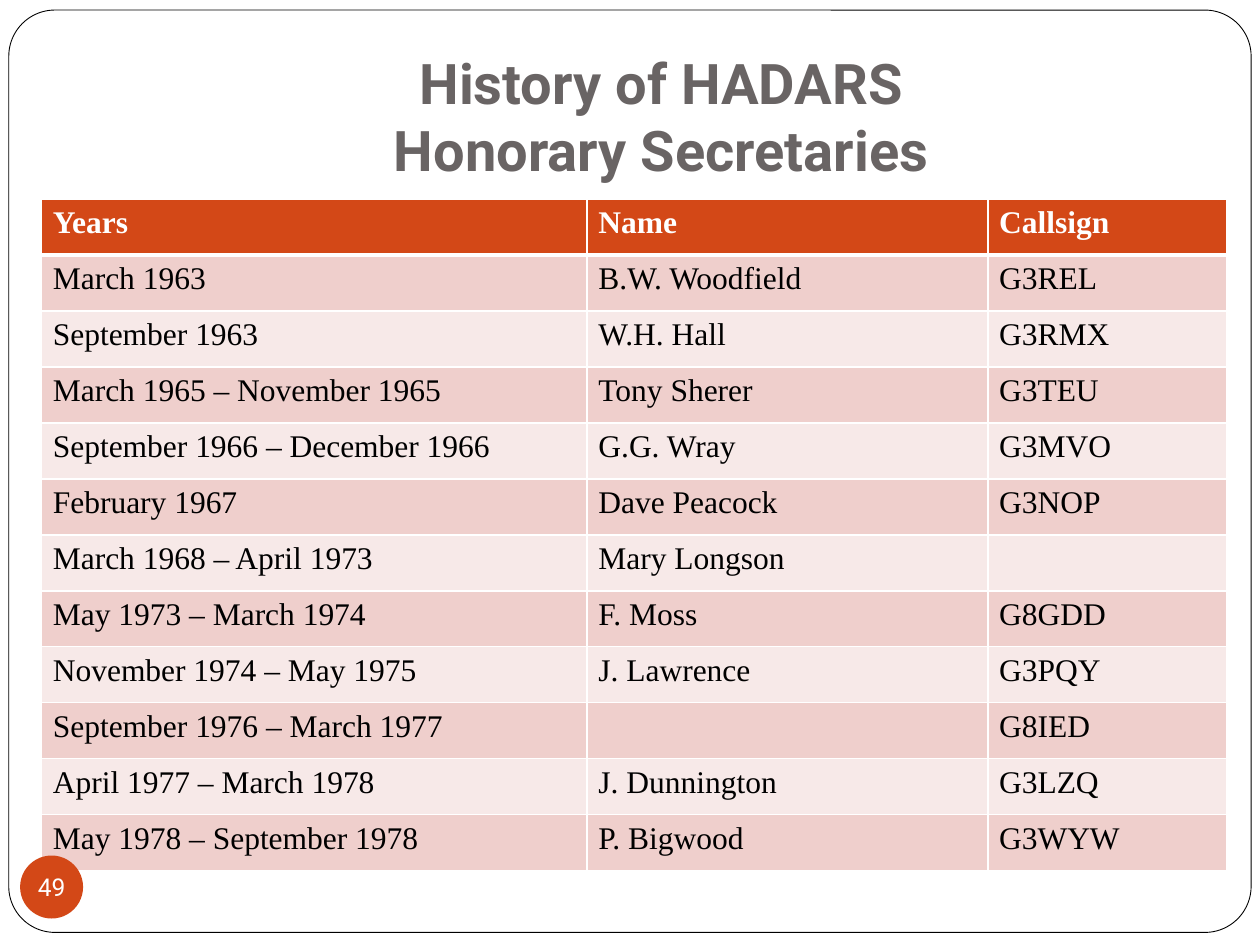
import pptx
import pptx.util
import pptx.dml.color
import pptx.enum.shapes
import pptx.enum.text
import pptx.oxml
import pptx.oxml.ns

Inches, Pt = pptx.util.Inches, pptx.util.Pt
Shape = pptx.enum.shapes.MSO_SHAPE
Align = pptx.enum.text.PP_ALIGN
Anchor = pptx.enum.text.MSO_ANCHOR
RUST, PINK, PALE = "D34817", "EFCFCC", "F7E9E8"
WHITE, BLACK, GRAY = "FFFFFF", "000000", "696464"


def color(code):
    return pptx.dml.color.RGBColor.from_string(code)


def write(frame, text, font="Times New Roman", size=18, ink=BLACK, bold=False,
          align=Align.LEFT, anchor=Anchor.TOP, wrap=True,
          pad=(0.1, 0.05, 0.1, 0.05)):
    frame.word_wrap = wrap
    frame.vertical_anchor = anchor
    frame.margin_left, frame.margin_top, frame.margin_right, frame.margin_bottom = map(Inches, pad)
    para = frame.paragraphs[0]
    para.alignment = align
    for i, line in enumerate(text.split("\n")):
        if i:
            para.add_line_break()
        run = para.add_run()
        run.text = line
        run.font.name = font
        run.font.size = Pt(size)
        run.font.bold = bold
        run.font.color.rgb = color(ink)


deck = pptx.Presentation()
deck.slide_width, deck.slide_height = Inches(10), Inches(7.5)
slide = deck.slides.add_slide(deck.slide_layouts[6])
shapes = slide.shapes

# Rounded frame
frame = shapes.add_shape(Shape.ROUNDED_RECTANGLE, Inches(0.07), Inches(0.08),
                         Inches(9.86), Inches(7.32))
frame.adjustments[0] = 0.05
frame.shadow.inherit = False
frame.fill.solid()
frame.fill.fore_color.rgb = color(WHITE)
frame.line.color.rgb = color(BLACK)
frame.line.width = Pt(0.5)

# Title
title = shapes.add_textbox(Inches(1), Inches(0.3), Inches(8.5), Inches(1.25))
write(title.text_frame, "History of HADARS\nHonorary Secretaries", font="Roboto",
      size=32, ink=GRAY, bold=True, align=Align.CENTER, anchor=Anchor.BOTTOM,
      pad=(0.1, 0.05, 0.1, 0.1))

# Table of secretaries
rows = [
    ("Years", "Name", "Callsign"),
    ("March 1963", "B.W. Woodfield", "G3REL"),
    ("September 1963", "W.H. Hall", "G3RMX"),
    ("March 1965 – November 1965", "Tony Sherer", "G3TEU"),
    ("September 1966 – December 1966", "G.G. Wray", "G3MVO"),
    ("February 1967", "Dave Peacock", "G3NOP"),
    ("March 1968 – April 1973", "Mary Longson", ""),
    ("May 1973 – March 1974", "F. Moss", "G8GDD"),
    ("November 1974 – May 1975", "J. Lawrence", "G3PQY"),
    ("September 1976 – March 1977", "", "G8IED"),
    ("April 1977 – March 1978", "J. Dunnington", "G3LZQ"),
    ("May 1978 – September 1978", "P. Bigwood", "G3WYW"),
]
table = shapes.add_table(len(rows), 3, Inches(0.33), Inches(1.58),
                         Inches(9.41), Inches(5.33)).table
for col, width in zip(table.columns, (4.33, 3.18, 1.9)):
    col.width = Inches(width)

for r, row in enumerate(rows):
    head = r == 0
    for c, text in enumerate(row):
        cell = table.cell(r, c)
        # White borders, heavier between the header and the body
        props = cell._tc.get_or_add_tcPr()
        for side in "LRTB":
            heavy = (r, side) in ((0, "B"), (1, "T"))
            props.append(pptx.oxml.parse_xml(
                f'<a:ln{side} {pptx.oxml.ns.nsdecls("a")} w="{Pt(3 if heavy else 1)}">'
                f'<a:solidFill><a:srgbClr val="{WHITE}"/></a:solidFill></a:ln{side}>'))
        cell.fill.solid()
        cell.fill.fore_color.rgb = color(RUST if head else PINK if r % 2 else PALE)
        cell.margin_left = cell.margin_right = Inches(0.09)
        cell.margin_top = cell.margin_bottom = Inches(0.05)
        if text:
            write(cell.text_frame, text, ink=WHITE if head else BLACK, bold=head,
                  pad=(0.09, 0.05, 0.09, 0.05))

# Page number
badge = shapes.add_shape(Shape.OVAL, Inches(0.16), Inches(6.79), Inches(0.5), Inches(0.5))
badge.shadow.inherit = False
badge.fill.solid()
badge.fill.fore_color.rgb = color(RUST)
badge.line.fill.background()
write(badge.text_frame, "49", font="Roboto", size=14, ink=WHITE, align=Align.CENTER,
      anchor=Anchor.MIDDLE, wrap=False, pad=(0, 0, 0, 0))

deck.save("out.pptx")
